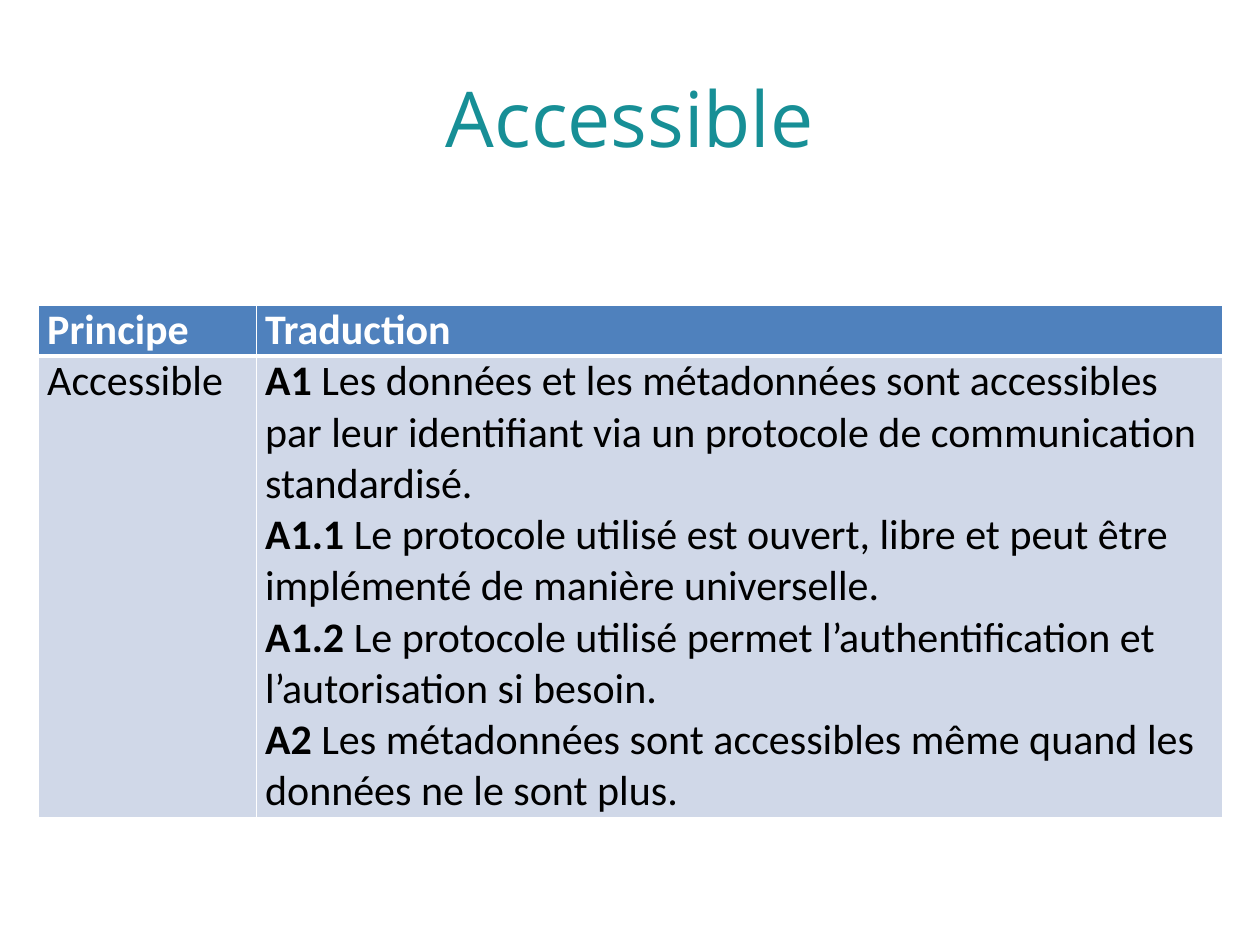
from dataclasses import dataclass

from lxml import etree
from pptx import Presentation
from pptx import util as u
from pptx.dml.color import RGBColor
from pptx.enum import text
from pptx.oxml import ns


@dataclass(frozen=True)
class Theme:
    title_font: str = "Open Sans"
    body_font: str = "Calibri"
    title_size: int = 44
    body_size: int = 24
    title_color: str = "178F96"
    header_fill: str = "4F81BD"
    body_fill: str = "D0D8E8"
    header_text: str = "FFFFFF"
    body_text: str = "000000"
    border: str = "FFFFFF"


THEME = Theme()
HEADINGS = ("Principe", "Traduction")
PRINCIPLE = "Accessible"
RULES = (
    ("A1", "Les données et les métadonnées sont accessibles par leur identifiant "
           "via un protocole de communication standardisé."),
    ("A1.1", "Le protocole utilisé est ouvert, libre et peut être implémenté "
             "de manière universelle."),
    ("A1.2", "Le protocole utilisé permet l’authentification et l’autorisation si besoin."),
    ("A2", "Les métadonnées sont accessibles même quand les données ne le sont plus."),
)


def style_run(run, font, size, color, bold=False):
    run.font.name = font
    run.font.size = u.Pt(size)
    run.font.bold = bold
    run.font.color.rgb = RGBColor.from_string(color)


def add_title(slide, wording):
    title = slide.shapes.add_textbox(u.Pt(36), u.Pt(21.6), u.Pt(648), u.Pt(90))
    frame = title.text_frame
    frame.word_wrap = True
    frame.vertical_anchor = text.MSO_ANCHOR.MIDDLE
    frame.text = wording
    heading = frame.paragraphs[0]
    heading.alignment = text.PP_ALIGN.CENTER
    style_run(heading.runs[0], THEME.title_font, THEME.title_size, THEME.title_color)


def set_borders(cell, **widths):
    """Draw the cell's edges; widths in points, keyed L, R, T and B in that order."""
    properties = cell._tc.get_or_add_tcPr()
    for side, width in widths.items():
        edge = etree.SubElement(properties, ns.qn(f"a:ln{side}"), w=str(u.Pt(width)))
        fill = etree.SubElement(edge, ns.qn("a:solidFill"))
        etree.SubElement(fill, ns.qn("a:srgbClr"), val=THEME.border)


def fill_cell(cell, paragraphs, fill, color, top, bottom):
    """Write paragraphs, each a list of (wording, bold) pairs, and style the cell."""
    set_borders(cell, L=1, R=1, T=top, B=bottom)
    cell.fill.solid()
    cell.fill.fore_color.rgb = RGBColor.from_string(fill)
    cell.margin_left = cell.margin_right = u.Pt(5)
    cell.margin_top = cell.margin_bottom = u.Pt(0)
    frame = cell.text_frame
    for index, pieces in enumerate(paragraphs):
        paragraph = frame.add_paragraph() if index else frame.paragraphs[0]
        for wording, bold in pieces:
            run = paragraph.add_run()
            run.text = wording
            style_run(run, THEME.body_font, THEME.body_size, color, bold)


def add_principle_table(slide):
    # One text line in the header and nine in the body, at 29.3 pt each.
    column_widths, row_heights = (124.5, 552), (29.3, 264)
    table = slide.shapes.add_table(
        2, 2, u.Pt(22), u.Pt(174.2),
        u.Pt(sum(column_widths)), u.Pt(sum(row_heights))).table
    for column, width in zip(table.columns, column_widths):
        column.width = u.Pt(width)
    for row, height in zip(table.rows, row_heights):
        row.height = u.Pt(height)

    for column, heading in enumerate(HEADINGS):
        fill_cell(table.cell(0, column), [[(heading, True)]],
                  THEME.header_fill, THEME.header_text, top=1, bottom=3)
    translations = [[(code, True), (f" {rule}", False)] for code, rule in RULES]
    for column, paragraphs in enumerate(([[(PRINCIPLE, False)]], translations)):
        fill_cell(table.cell(1, column), paragraphs,
                  THEME.body_fill, THEME.body_text, top=3, bottom=1)


def main():
    deck = Presentation()
    deck.slide_width, deck.slide_height = u.Pt(720), u.Pt(540)
    slide = deck.slides.add_slide(deck.slide_layouts[6])
    add_title(slide, PRINCIPLE)
    add_principle_table(slide)
    deck.save("out.pptx")


if __name__ == "__main__":
    main()
